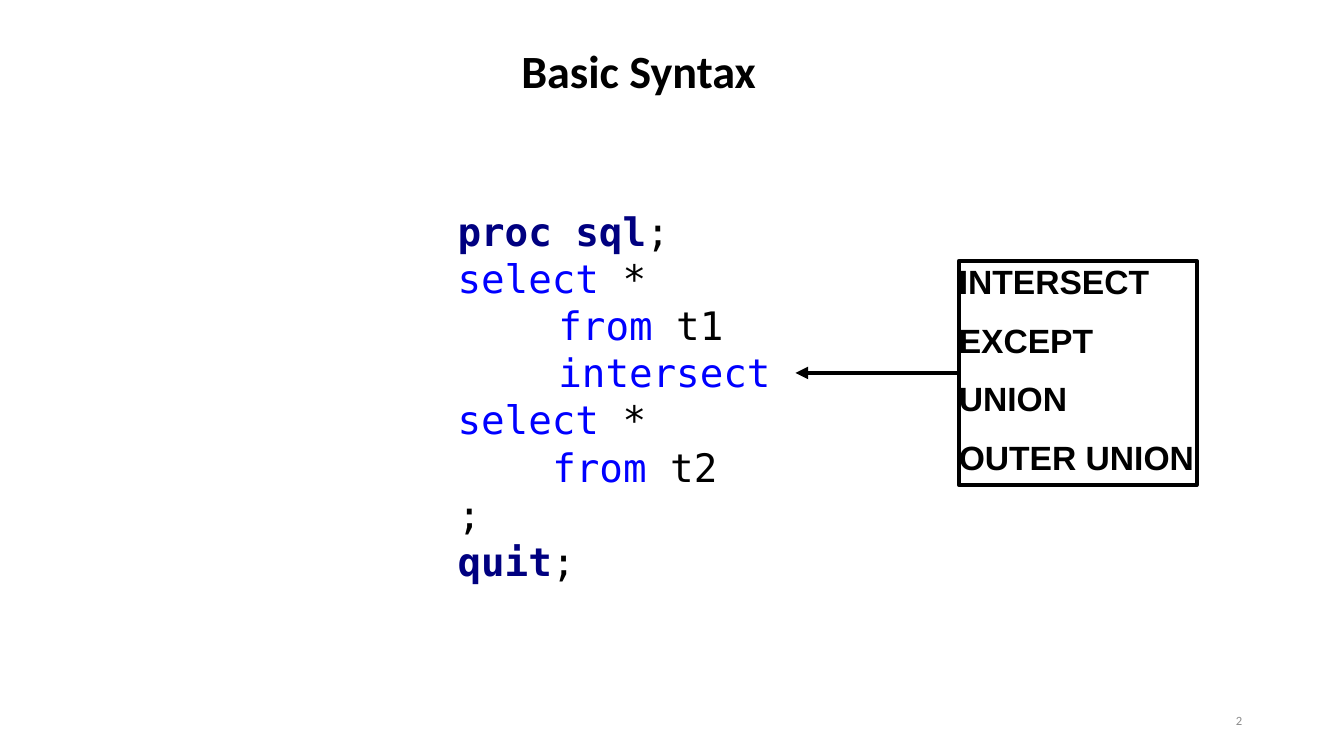
from lxml import etree
from pptx import Presentation
from pptx import util as u
from pptx.dml.color import RGBColor
from pptx.enum import shapes, text
from pptx.oxml.ns import qn

PX = 9144  # 100 px to the inch

BLACK = RGBColor(0x00, 0x00, 0x00)
NAVY = RGBColor(0x00, 0x00, 0x80)
BLUE = RGBColor(0x00, 0x00, 0xFF)
GREY = RGBColor(0x8C, 0x8C, 0x8C)

# Each line of code: indent in px, then (words, colour) runs
CODE = [
    (0, [("proc sql", NAVY), (";", BLACK)]),
    (0, [("select", BLUE), (" *", BLACK)]),
    (100, [("from", BLUE), (" t1", BLACK)]),
    (100, [("intersect", BLUE)]),
    (0, [("select", BLUE), (" *", BLACK)]),
    (94, [("from", BLUE), (" t2", BLACK)]),
    (0, [(";", BLACK)]),
    (0, [("quit", NAVY), (";", BLACK)]),
]
SETS = ["INTERSECT", "EXCEPT", "UNION", "OUTER UNION"]


def px(*sizes):
    return [u.Emu(size * PX) for size in sizes]


def style(para, face, size, color=None, bold=False):
    font = para.font
    font.name, font.size, font.bold = face, u.Pt(size), bold
    if color is not None:
        font.color.rgb = color


def paras(frame, count):
    """Return count paragraphs of an empty text frame."""
    return [frame.paragraphs[0]] + [frame.add_paragraph() for _ in range(count - 1)]


def add_title(slide, words):
    title = slide.shapes.title
    title.left, title.top, title.width, title.height = px(507, 0, 362, 145)
    frame = title.text_frame
    frame.text = words
    frame.auto_size = text.MSO_AUTO_SIZE.NONE
    frame.vertical_anchor = text.MSO_ANCHOR.MIDDLE
    para = frame.paragraphs[0]
    para.alignment = text.PP_ALIGN.LEFT
    para.line_spacing = 0.9
    style(para, "Calibri", 33, BLACK, True)


def add_page(slide, number):
    frame = slide.shapes.add_textbox(*px(942, 695, 300, 40)).text_frame
    frame.word_wrap = True
    frame.vertical_anchor = text.MSO_ANCHOR.MIDDLE
    frame.text = number
    para = frame.paragraphs[0]
    para.alignment = text.PP_ALIGN.RIGHT
    style(para, "Calibri", 9, GREY)


def add_code(slide, lines):
    frame = slide.shapes.add_textbox(*px(444, 201, 605, 387)).text_frame
    frame.word_wrap = True
    for para, (indent, runs) in zip(paras(frame, len(lines)), lines):
        style(para, "DejaVu Sans Mono", 28)
        if indent:
            props = para._p.get_or_add_pPr()
            props.set("marL", str(indent * PX))
            props.set("indent", "0")
        for words, color in runs:
            run = para.add_run()
            run.text = words
            run.font.color.rgb = color
            run.font.bold = color == NAVY


def add_list(slide, items):
    box = slide.shapes.add_shape(shapes.MSO_SHAPE.RECTANGLE, *px(951, 259, 236, 222))
    box.shadow.inherit = False
    box.fill.background()
    box.line.color.rgb = BLACK
    box.line.width = u.Pt(3)
    frame = box.text_frame
    frame.word_wrap = False
    frame.vertical_anchor = text.MSO_ANCHOR.TOP
    frame.margin_left = frame.margin_right = 0
    frame.margin_top = frame.margin_bottom = 0
    for i, (para, item) in enumerate(zip(paras(frame, len(items)), items)):
        para.text = item
        para.alignment = text.PP_ALIGN.LEFT
        para.space_before = u.Pt(13 if i else 0)
        style(para, "Arial", 24, BLACK, True)


def add_arrow(slide, *ends):
    arrow = slide.shapes.add_connector(shapes.MSO_CONNECTOR.STRAIGHT, *px(*ends))
    arrow.line.color.rgb = BLACK
    arrow.line.width = u.Pt(3)
    etree.SubElement(arrow.line._get_or_add_ln(), qn("a:tailEnd"), type="triangle")
    etree.SubElement(arrow._element.spPr, qn("a:effectLst"))


def main():
    deck = Presentation()
    deck.slide_width, deck.slide_height = px(1333, 750)
    slide = deck.slides.add_slide(deck.slide_layouts[5])
    add_title(slide, "Basic Syntax")
    add_page(slide, "2")
    add_code(slide, CODE)
    add_list(slide, SETS)
    add_arrow(slide, 951, 370, 789, 370)
    deck.save("out.pptx")


if __name__ == "__main__":
    main()
